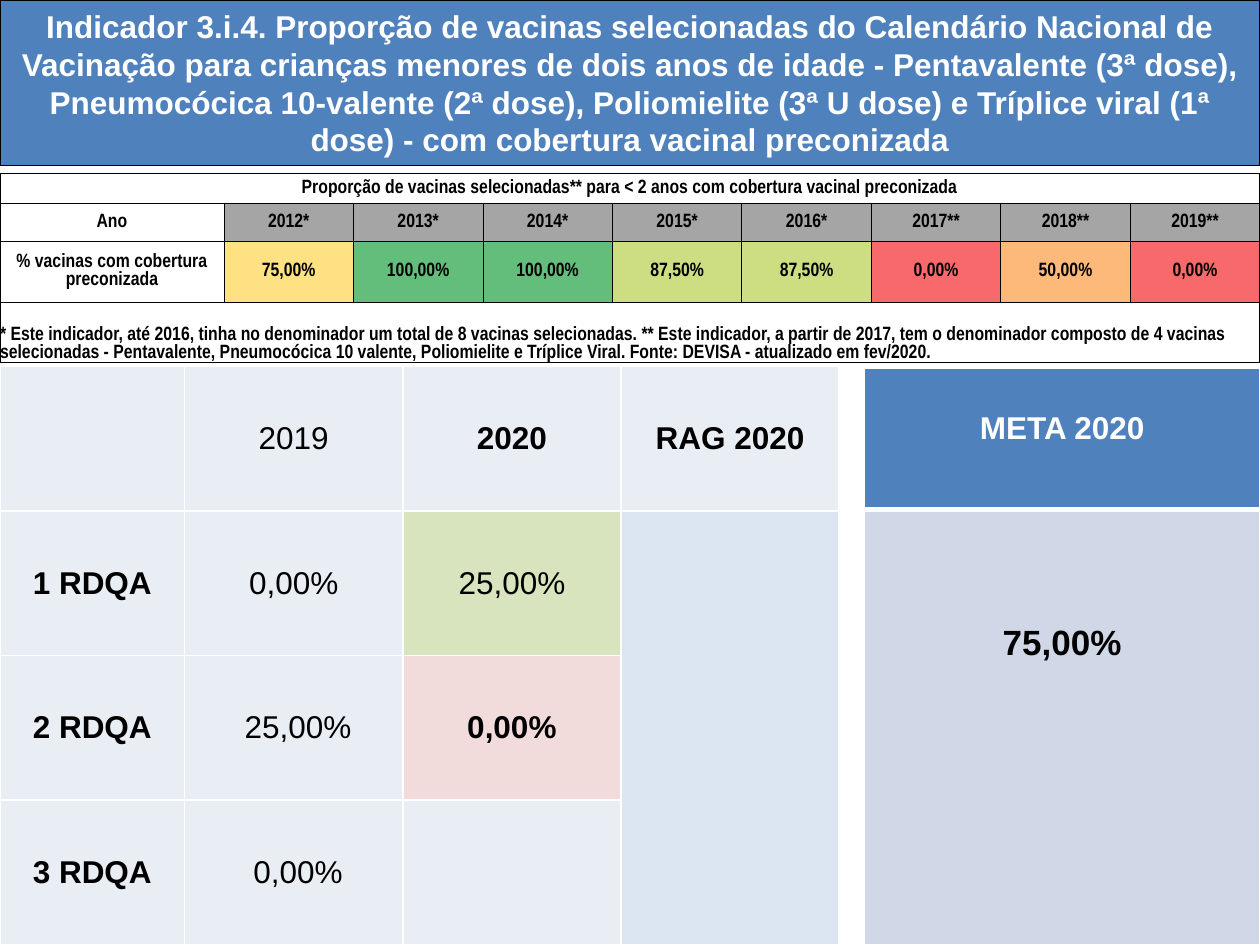
import dataclasses
import typing

import lxml.etree
import pptx
import pptx.dml.color
import pptx.enum.text
import pptx.oxml.ns
import pptx.util

Pt = pptx.util.Pt
ALIGN = pptx.enum.text.PP_ALIGN
ANCHOR = pptx.enum.text.MSO_ANCHOR

COLORS = {
    "black": "000000",
    "white": "FFFFFF",
    "blue": "4F81BD",
    "pale_blue": "DCE6F2",
    "goal": "D0D8E8",
    "body": "E9EDF4",
    "pale_green": "D7E4BD",
    "pale_red": "F2DCDB",
    "gray": "A5A5A5",
    "yellow": "FEE182",
    "green": "63BE7B",
    "lime": "CCDD82",
    "red": "F8696B",
    "orange": "FCB97A",
}


@dataclasses.dataclass
class Cell:
    text: str = ""
    fill: typing.Optional[str] = None
    bold: bool = True
    size: float = 18
    color: str = "black"
    align: ALIGN = ALIGN.CENTER
    anchor: ANCHOR = ANCHOR.MIDDLE
    margin_top: float = 0
    bottom_border: typing.Optional[float] = None


@dataclasses.dataclass
class Grid:
    left: float
    top: float
    columns: list[float]
    rows: list[float]
    cells: list[list[Cell]]
    border_color: str
    border_width: float
    font: str = "Arial"
    merges: tuple[tuple[int, int, int, int], ...] = ()


def rgb(name: str) -> pptx.dml.color.RGBColor:
    return pptx.dml.color.RGBColor.from_string(COLORS[name])


def set_borders(cell, color: str, width: float, bottom: float) -> None:
    properties = cell._tc.get_or_add_tcPr()
    widths = {"a:lnL": width, "a:lnR": width, "a:lnT": width, "a:lnB": bottom}
    for position, (tag, points) in enumerate(widths.items()):
        line = lxml.etree.Element(pptx.oxml.ns.qn(tag), w=str(int(Pt(points))))
        fill = lxml.etree.SubElement(line, pptx.oxml.ns.qn("a:solidFill"))
        lxml.etree.SubElement(fill, pptx.oxml.ns.qn("a:srgbClr"), val=COLORS[color])
        properties.insert(position, line)


def format_text(paragraph, font: str, size: float, bold: bool, color: str, align: ALIGN) -> None:
    paragraph.alignment = align
    paragraph.font.name = font
    paragraph.font.size = Pt(size)
    paragraph.font.bold = bold
    paragraph.font.color.rgb = rgb(color)


def draw_cell(target, cell: Cell, grid: Grid) -> None:
    target.margin_left = target.margin_right = target.margin_bottom = Pt(0)
    target.margin_top = Pt(cell.margin_top)
    target.vertical_anchor = cell.anchor
    target.text = cell.text
    format_text(target.text_frame.paragraphs[0], grid.font, cell.size, cell.bold, cell.color, cell.align)
    if cell.fill:
        target.fill.solid()
        target.fill.fore_color.rgb = rgb(cell.fill)
    else:
        target.fill.background()
    set_borders(target, grid.border_color, grid.border_width, cell.bottom_border or grid.border_width)


def draw_grid(slide, grid: Grid) -> None:
    frame = slide.shapes.add_table(
        len(grid.rows), len(grid.columns), Pt(grid.left), Pt(grid.top),
        Pt(sum(grid.columns)), Pt(sum(grid.rows)),
    )
    table = frame.table
    table.first_row = table.horz_banding = False
    for column, width in zip(table.columns, grid.columns):
        column.width = Pt(width)
    for row, height in zip(table.rows, grid.rows):
        row.height = Pt(height)
    for row_index, row_cells in enumerate(grid.cells):
        for column_index, cell in enumerate(row_cells):
            draw_cell(table.cell(row_index, column_index), cell, grid)
    for first_row, first_column, last_row, last_column in grid.merges:
        table.cell(first_row, first_column).merge(table.cell(last_row, last_column))


def draw_title(slide, text: str) -> None:
    title = slide.shapes.title
    title.left, title.top, title.width, title.height = Pt(0), Pt(0), Pt(720), Pt(94.5)
    title.fill.solid()
    title.fill.fore_color.rgb = rgb("blue")
    title.line.color.rgb = rgb("black")
    title.line.width = Pt(0.75)
    title.text_frame.text = text
    title.text_frame.word_wrap = True
    title.text_frame.auto_size = pptx.enum.text.MSO_AUTO_SIZE.NONE
    title.text_frame.vertical_anchor = ANCHOR.MIDDLE
    format_text(title.text_frame.paragraphs[0], "Arial", 18, True, "white", ALIGN.CENTER)


def quarterly_grid() -> Grid:
    def body(text: str = "", bold: bool = True, fill: str = "body") -> Cell:
        return Cell(text, fill, bold)

    rag = body(fill="pale_blue")
    cells = [
        [body(), body("2019", False), body("2020"), body("RAG 2020")],
        [body("1 RDQA"), body("0,00%", False), body("25,00%", False, "pale_green"), rag],
        [body("2 RDQA"), body(" 25,00%", False), body("0,00%", True, "pale_red"), rag],
        [body("3 RDQA"), body(" 0,00%", False), body(), rag],
    ]
    return Grid(0, 209.5, [105.5] + [124.7] * 3, [82.6] * 4, cells, "white", 1,
                merges=((1, 3, 3, 3),))


def goal_grid() -> Grid:
    cells = [
        [Cell("META 2020", "blue", color="white", anchor=ANCHOR.TOP, margin_top=24.3, bottom_border=3)],
        [Cell("75,00%", "goal", size=20, anchor=ANCHOR.TOP, margin_top=65.7)],
    ]
    return Grid(494, 210.5, [226], [80.5, 249], cells, "white", 1)


def history_grid() -> Grid:
    years = ["2012*", "2013*", "2014*", "2015*", "2016*", "2017**", "2018**", "2019**"]
    coverage = [
        ("75,00%", "yellow"), ("100,00%", "green"), ("100,00%", "green"), ("87,50%", "lime"),
        ("87,50%", "lime"), ("0,00%", "red"), ("50,00%", "orange"), ("0,00%", "red"),
    ]
    heading = "Proporção de vacinas selecionadas** para < 2 anos com cobertura vacinal preconizada"
    note = (
        "* Este indicador, até 2016, tinha no denominador um total de 8 vacinas selecionadas. "
        "** Este indicador, a partir de 2017, tem o denominador composto de 4 vacinas selecionadas "
        "- Pentavalente, Pneumocócica 10 valente, Poliomielite e Tríplice Viral. "
        "Fonte: DEVISA - atualizado em fev/2020."
    )
    blanks = [Cell(size=11) for _ in years]
    cells = [
        [Cell(heading, size=11)] + blanks,
        [Cell("Ano", size=11)] + [Cell(year, "gray", size=11) for year in years],
        [Cell("% vacinas com cobertura preconizada", size=11)]
        + [Cell(value, fill, size=11) for value, fill in coverage],
        [Cell(note, size=11, align=ALIGN.LEFT, anchor=ANCHOR.BOTTOM)] + blanks,
    ]
    return Grid(0, 99.2, [128] + [74] * 8, [17.2, 21.6, 34.6, 34.6], cells, "black", 0.5,
                "Arial Narrow", ((0, 0, 0, 8), (3, 0, 3, 8)))


def main() -> None:
    presentation = pptx.Presentation()
    presentation.slide_width, presentation.slide_height = Pt(720), Pt(540)
    slide = presentation.slides.add_slide(presentation.slide_layouts.get_by_name("Title Only"))
    draw_title(
        slide,
        "Indicador 3.i.4. Proporção de vacinas selecionadas do Calendário Nacional de Vacinação "
        "para crianças menores de dois anos de idade - Pentavalente (3ª dose), Pneumocócica "
        "10-valente (2ª dose), Poliomielite (3ª U dose) e Tríplice viral (1ª dose) - com "
        "cobertura vacinal preconizada",
    )
    for grid in (quarterly_grid(), goal_grid(), history_grid()):
        draw_grid(slide, grid)
    presentation.save("out.pptx")


if __name__ == "__main__":
    main()
